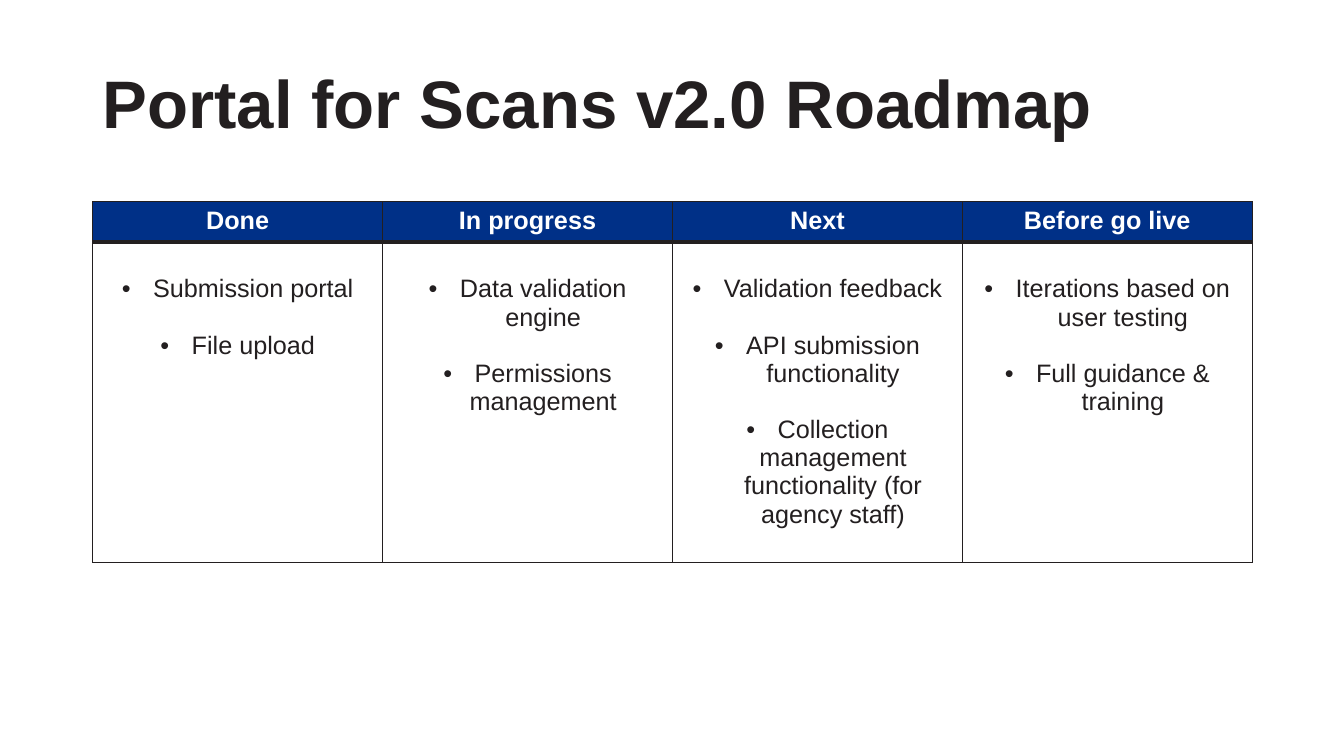
from lxml.etree import SubElement
from pptx import Presentation
from pptx.dml.color import RGBColor
from pptx.enum.text import MSO_ANCHOR, PP_ALIGN
from pptx.oxml.ns import qn
from pptx.util import Inches, Pt

NAVY = RGBColor(0x00, 0x30, 0x87)
INK = RGBColor(0x23, 0x1F, 0x20)
WHITE = RGBColor(0xFF, 0xFF, 0xFF)

HEADER_HEIGHT = 0.4
ITEM_GAP = Pt(20)
HANGING = Inches(0.31)

STAGES = {
    "Done": ["Submission portal", "File upload"],
    "In progress": ["Data validation engine", "Permissions management"],
    "Next": [
        "Validation feedback",
        "API submission functionality",
        "Collection management functionality (for agency staff)",
    ],
    "Before go live": ["Iterations based on user testing", "Full guidance & training"],
}


def write(paragraph, text, size, color, bold=False):
    """Add one formatted run to a paragraph."""
    run = paragraph.add_run()
    run.text = text
    run.font.color.rgb = color
    for name, value in {"name": "Arial", "size": Pt(size), "bold": bold}.items():
        setattr(run.font, name, value)


def style_cell(cell, fill, **edges):
    """Draw the cell's borders, given as widths in points, and fill it."""
    properties = cell._tc.get_or_add_tcPr()
    for edge in ("L", "R", "T", "B"):
        line = SubElement(properties, qn(f"a:ln{edge}"), w=str(Pt(edges.get(edge, 1))))
        paint = SubElement(line, qn("a:solidFill"))
        SubElement(paint, qn("a:srgbClr"), val=str(INK))
    cell.fill.solid()
    cell.fill.fore_color.rgb = fill


def add_bullet(paragraph):
    """Give the paragraph a hanging round bullet."""
    properties = paragraph._p.get_or_add_pPr()
    properties.set("marL", str(HANGING))
    properties.set("indent", str(-HANGING))
    SubElement(properties, qn("a:buFont"), typeface="Arial")
    SubElement(properties, qn("a:buChar"), char="•")


def add_title(slide, text, left, top, width, height):
    """Place the slide heading, centred vertically in its box."""
    heading = slide.shapes.add_textbox(
        Inches(left), Inches(top), Inches(width), Inches(height)
    ).text_frame
    heading.word_wrap = True
    heading.vertical_anchor = MSO_ANCHOR.MIDDLE
    heading.paragraphs[0].line_spacing = 0.9
    write(heading.paragraphs[0], text, 48, INK, bold=True)


def add_roadmap(slide, stages, left, top, width, height):
    """Place a table with one column of bulleted items per stage."""
    roadmap = slide.shapes.add_table(
        2, len(stages), Inches(left), Inches(top), Inches(width), Inches(height)
    ).table
    roadmap.rows[0].height = Inches(HEADER_HEIGHT)
    roadmap.rows[1].height = Inches(height - HEADER_HEIGHT)
    for column, (stage, items) in enumerate(stages.items()):
        header, body = roadmap.cell(0, column), roadmap.cell(1, column)
        style_cell(header, NAVY, B=3)
        style_cell(body, WHITE, T=3)
        stage_name = header.text_frame.paragraphs[0]
        stage_name.alignment = PP_ALIGN.CENTER
        write(stage_name, stage, 18, WHITE, bold=True)
        body.margin_top = Inches(0.05) + ITEM_GAP
        for index, item in enumerate(items):
            frame = body.text_frame
            entry = frame.add_paragraph() if index else frame.paragraphs[0]
            entry.alignment = PP_ALIGN.CENTER
            add_bullet(entry)
            if index:
                entry.space_before = ITEM_GAP
            write(entry, item, 18, INK)


def main():
    """Build and save the roadmap slide."""
    deck = Presentation()
    deck.slide_width, deck.slide_height = Inches(13.33), Inches(7.5)
    slide = deck.slides.add_slide(deck.slide_layouts[6])
    add_title(slide, "Portal for Scans v2.0 Roadmap", 0.92, 0.12, 11.09, 1.88)
    add_roadmap(slide, STAGES, 0.92, 2, 11.5, 3.58)
    deck.save("out.pptx")


if __name__ == "__main__":
    main()
